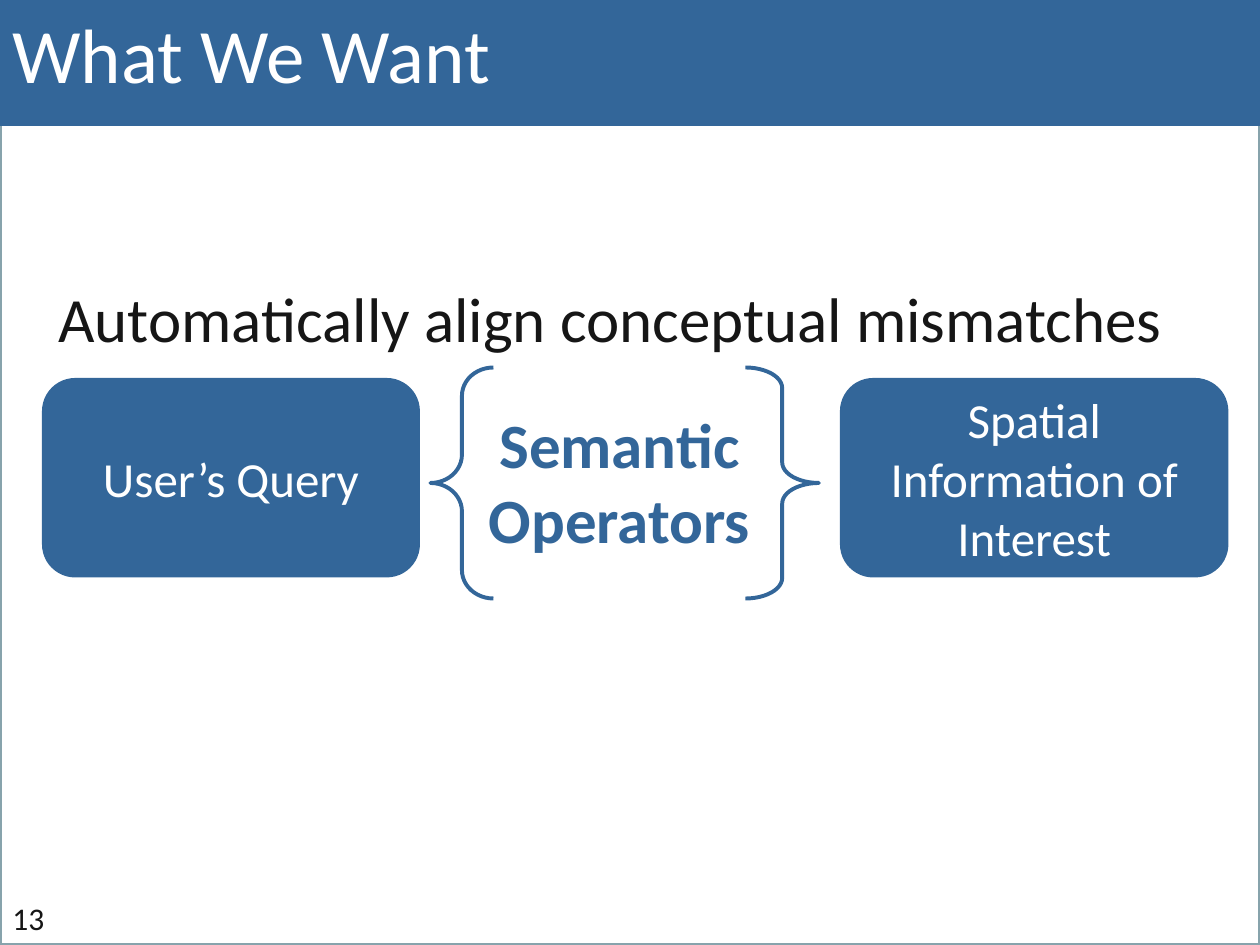
import pptx
import pptx.dml.color
import pptx.enum.shapes
import pptx.enum.text
import pptx.util

Pt = pptx.util.Pt
SHAPE = pptx.enum.shapes.MSO_SHAPE
ALIGN = pptx.enum.text.PP_ALIGN
ANCHOR = pptx.enum.text.MSO_ANCHOR


def color(value):
    return pptx.dml.color.RGBColor.from_string(value)


class Deck:
    font = "Calibri"
    blue = "336699"
    white = "FFFFFF"
    dark = "161616"
    border = "87A3AC"
    backdrop = "D8D8D8"

    def __init__(self, width, height):
        self.prs = pptx.Presentation()
        self.prs.slide_width = Pt(width)
        self.prs.slide_height = Pt(height)
        self.s = self.prs.slides.add_slide(self.prs.slide_layouts[6])
        fill = self.s.background.fill
        fill.solid()
        fill.fore_color.rgb = color(self.backdrop)

    def set_text(self, sp, text, size, ink, align=ALIGN.LEFT, anchor=ANCHOR.TOP, bold=False):
        tf = sp.text_frame
        tf.word_wrap = True
        tf.vertical_anchor = anchor
        tf.text = text
        p = tf.paragraphs[0]
        p.alignment = align
        r = p.runs[0]
        r.font.name = self.font
        r.font.size = Pt(size)
        r.font.bold = bold
        r.font.color.rgb = color(ink)

    def shape(self, kind, box, fill=None, line=None, weight=2.25):
        sp = self.s.shapes.add_shape(kind, *map(Pt, box))
        sp.shadow.inherit = False
        if fill:
            sp.fill.solid()
            sp.fill.fore_color.rgb = color(fill)
        else:
            sp.fill.background()
        if line:
            sp.line.color.rgb = color(line)
            sp.line.width = Pt(weight)
        else:
            sp.line.fill.background()
        return sp

    def title(self, text, box):
        sp = self.shape(SHAPE.RECTANGLE, box, self.blue)
        self.set_text(sp, text, 44, self.white)

    def card(self, text, box):
        sp = self.shape(SHAPE.ROUNDED_RECTANGLE, box, self.blue)
        self.set_text(sp, text, 28, self.white, ALIGN.CENTER, ANCHOR.MIDDLE)

    def brace(self, kind, box, curve):
        sp = self.shape(kind, box, line=self.blue)
        sp.adjustments[0] = curve
        sp.adjustments[1] = 0.5

    def label(self, text, box, size, ink, indent=7.2, **style):
        sp = self.s.shapes.add_textbox(*map(Pt, box))
        sp.text_frame.margin_left = Pt(indent)
        self.set_text(sp, text, size, ink, **style)


def main():
    deck = Deck(720, 540)
    deck.shape(SHAPE.RECTANGLE, (0, 0, 720, 540), deck.white, deck.border, 2)
    deck.title("What We Want", (0, 0, 720, 72))
    deck.card("User’s Query", (24, 216, 216, 114))
    deck.card("Spatial Information of Interest", (480, 216, 222, 114))
    deck.label("Automatically align conceptual mismatches",
               (18, 156, 668, 51), 36, deck.dark, indent=15.3)
    deck.brace(SHAPE.LEFT_BRACE, (246, 210, 36, 132), 0.45)
    deck.brace(SHAPE.RIGHT_BRACE, (426, 210, 42, 132), 0.28)
    deck.label("Semantic Operators", (264, 228, 180, 94), 36, deck.blue,
               align=ALIGN.CENTER, bold=True)
    deck.label("13", (0, 510, 36, 30), 18, deck.dark)
    deck.prs.save("out.pptx")


if __name__ == "__main__":
    main()
